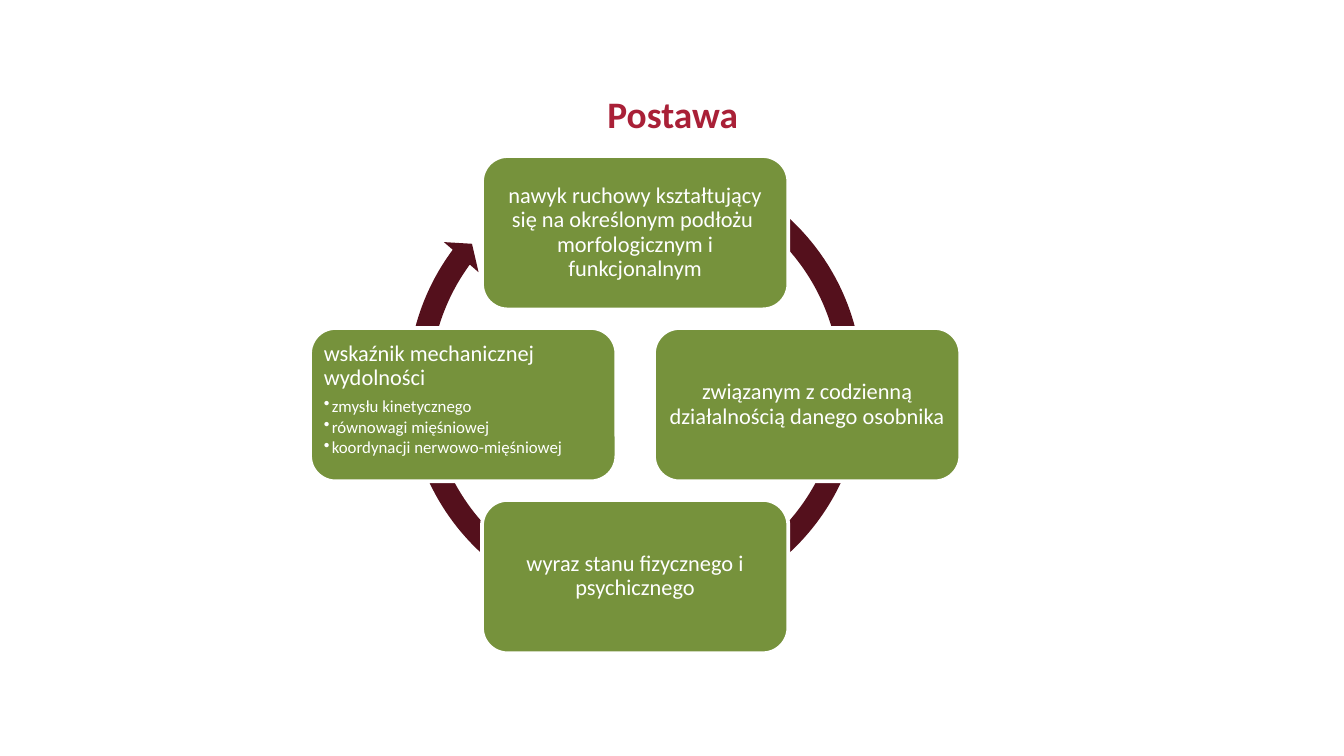
from dataclasses import dataclass
from lxml import etree
from pptx import Presentation
from pptx.dml.color import RGBColor
from pptx.enum.shapes import MSO_SHAPE
from pptx.enum.text import MSO_ANCHOR, PP_ALIGN
from pptx.oxml.ns import qn
from pptx.util import Cm, Pt

ARROW = MSO_SHAPE.CIRCULAR_ARROW
ROUND = MSO_SHAPE.ROUNDED_RECTANGLE
TOP, MIDDLE = MSO_ANCHOR.TOP, MSO_ANCHOR.MIDDLE
LEFT, CENTER = PP_ALIGN.LEFT, PP_ALIGN.CENTER


@dataclass(frozen=True)
class Theme:
    font: str = "Calibri"
    head: RGBColor = RGBColor(0xA9, 0x20, 0x37)
    ring: RGBColor = RGBColor(0x54, 0x10, 0x1C)
    card: RGBColor = RGBColor(0x76, 0x92, 0x3C)
    white: RGBColor = RGBColor(0xFF, 0xFF, 0xFF)
    big: int = 20
    body: int = 12
    small: int = 9


THEME = Theme()
CARDS = [
    (0, -1, ["nawyk ruchowy kształtujący się na określonym podłożu ",
             "morfologicznym i funkcjonalnym"], []),
    (1, 0, ["związanym z codzienną działalnością danego osobnika"], []),
    (0, 1, ["wyraz stanu fizycznego i psychicznego"], []),
    (-1, 0, ["wskaźnik mechanicznej wydolności"],
     ["zmysłu kinetycznego", "równowagi mięśniowej",
      "koordynacji nerwowo-mięśniowej"]),
]


def add_run(para, text, size, color, bold=False):
    run = para.add_run()
    run.text = text
    font = run.font
    font.name, font.size, font.bold = THEME.font, Pt(size), bold
    font.color.rgb = color


def add_lines(para, lines, size, align, after):
    para.alignment = align
    para.line_spacing = 0.9
    para.space_after = Pt(after)
    for i, line in enumerate(lines):
        if i:
            para.add_line_break()
        add_run(para, line, size, THEME.white)


def add_point(frame, text):
    para = frame.add_paragraph()
    para.level = 1
    props = para._p.get_or_add_pPr()
    props.set("marL", str(Cm(0.15)))
    props.set("indent", str(-Cm(0.15)))
    etree.SubElement(props, qn("a:buChar")).set("char", "•")
    add_lines(para, [text], THEME.small, LEFT, 1.35)


def add_card(slide, box, lines, points):
    card = slide.shapes.add_shape(ROUND, *map(Cm, box))
    card.shadow.inherit = False
    card.fill.solid()
    card.fill.fore_color.rgb = THEME.card
    card.line.color.rgb = THEME.white
    card.line.width = Pt(2)
    frame = card.text_frame
    frame.word_wrap = True
    frame.margin_left = frame.margin_right = Cm(0.12)
    frame.margin_top = frame.margin_bottom = Cm(0.12)
    frame.vertical_anchor = TOP if points else MIDDLE
    align = LEFT if points else CENTER
    add_lines(frame.paragraphs[0], lines, THEME.body, align, 4.2)
    for point in points:
        add_point(frame, point)


def add_title(slide, box, text):
    frame = slide.shapes.add_textbox(*map(Cm, box)).text_frame
    frame.word_wrap = True
    frame.vertical_anchor = MIDDLE
    para = frame.paragraphs[0]
    para.alignment = CENTER
    add_run(para, text, THEME.big, THEME.head, True)


def add_ring(slide, box):
    ring = slide.shapes.add_shape(ARROW, *map(Cm, box))
    ring.shadow.inherit = False
    for i, value in enumerate((0.047, 2.729, 129.871, 179.256, 0.048)):
        ring.adjustments[i] = value
    ring.fill.solid()
    ring.fill.fore_color.rgb = THEME.ring
    ring.line.fill.background()


def add_cycle(slide, box):
    left, top, wide, high = box
    size = 9.04
    add_ring(slide, (left + (wide - size) / 2, top - 0.18, size, size))
    card_w, card_h = 5.79, 2.9
    step_x, step_y = (wide - card_w) / 2, (high - card_h) / 2
    for col, row, lines, points in CARDS:
        spot = (left + (1 + col) * step_x, top + (1 + row) * step_y)
        add_card(slide, (*spot, card_w, card_h), lines, points)


def main():
    deck = Presentation()
    deck.slide_width, deck.slide_height = Cm(25.4), Cm(14.29)
    slide = deck.slides.add_slide(deck.slide_layouts[6])
    add_title(slide, (4.5, 0.76, 16.43, 2.77), "Postawa")
    add_cycle(slide, (5.86, 2.95, 12.29, 9.4))
    deck.save("out.pptx")


if __name__ == "__main__":
    main()
